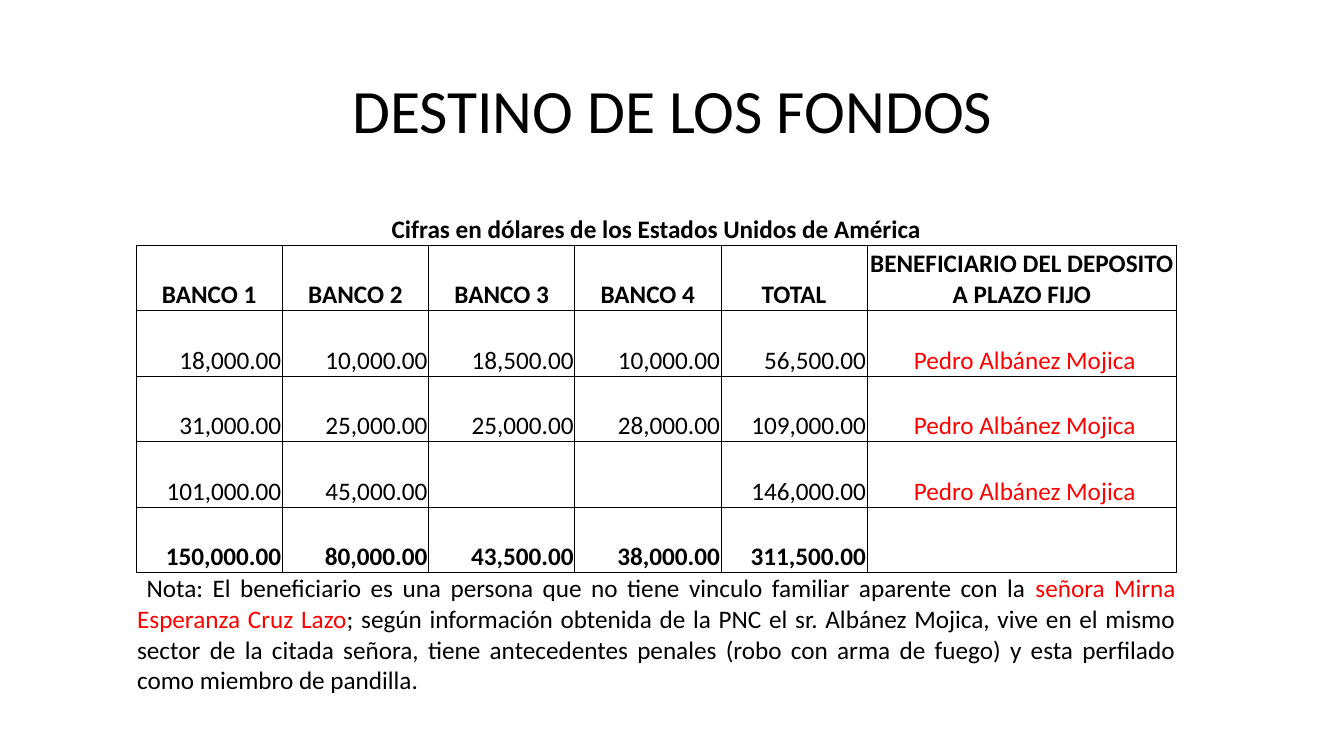
from pptx import Presentation
from pptx import util as u
from pptx.dml.color import RGBColor
from pptx.enum import text
from pptx.oxml.ns import qn
from lxml import etree

FONT, BLACK, RED = "Calibri", "000000", "FF0000"
AL = text.PP_ALIGN
WHO = " Pedro Albánez Mojica"
HEAD = ["BANCO 1", "BANCO 2", "BANCO 3", "BANCO 4", "TOTAL",
        "BENEFICIARIO DEL DEPOSITO A PLAZO FIJO"]
SUMS = [
    ["18,000.00", "10,000.00", "18,500.00", "10,000.00", "56,500.00", WHO],
    ["31,000.00", "25,000.00", "25,000.00", "28,000.00", "109,000.00", WHO],
    ["101,000.00", "45,000.00", "", "", "146,000.00", WHO],
    ["150,000.00", "80,000.00", "43,500.00", "38,000.00", "311,500.00", ""],
]
NOTE = [
    (" Nota: El beneficiario es una persona que no tiene vinculo familiar "
     "aparente con la ", BLACK),
    ("señora Mirna Esperanza Cruz Lazo", RED),
    ("; según información obtenida de la PNC el sr. Albánez Mojica, vive en "
     "el mismo sector de la citada señora, tiene antecedentes penales (robo "
     "con arma de fuego) y esta perfilado como miembro de pandilla.", BLACK),
]


def paint(font, color):
    font.color.rgb = RGBColor.from_string(color)


def add_run(par, words, size, color=BLACK, bold=False):
    run = par.add_run()
    run.text = words
    run.font.name = FONT
    run.font.size = u.Pt(size)
    run.font.bold = bold
    paint(run.font, color)


def add_title(slide, words):
    title = slide.shapes.title
    title.left, title.top = u.Inches(0.92), u.Inches(0.4)
    title.width, title.height = u.Inches(11.5), u.Inches(1.45)
    title.text_frame.vertical_anchor = text.MSO_ANCHOR.MIDDLE
    par = title.text_frame.paragraphs[0]
    par.alignment = AL.CENTER
    par.line_spacing = 0.9
    add_run(par, words, 44)


def add_edges(cell, sides):
    """Draw the named sides in black and leave the others without a line."""
    props = cell._tc.get_or_add_tcPr()
    for side in "LRTB":
        line = etree.SubElement(props, qn("a:ln" + side), w=str(u.Pt(0.5)))
        if side in sides:
            fill = etree.SubElement(line, qn("a:solidFill"))
            etree.SubElement(fill, qn("a:srgbClr"), val=BLACK)
        else:
            etree.SubElement(line, qn("a:noFill"))


def fill_cell(cell, runs, align, bold=False):
    cell.vertical_anchor = text.MSO_ANCHOR.BOTTOM
    cell.margin_left = cell.margin_right = cell.margin_top = u.Inches(0.01)
    cell.margin_bottom = 0
    par = cell.text_frame.paragraphs[0]
    par.alignment = align
    par.font.size = u.Pt(18)
    for words, color in runs:
        add_run(par, words, 18, color, bold)


def add_grid(slide):
    wide = [1.45] * 5 + [3.07]
    high = [0.84] + [0.65] * 5 + [0.97]
    last = len(high) - 1
    frame = slide.shapes.add_table(
        len(high), len(wide), u.Inches(1.35), u.Inches(1.59),
        u.Inches(sum(wide)), u.Inches(sum(high)))
    grid = frame.table
    grid.first_row = grid.horz_banding = False
    for col, size in zip(grid.columns, wide):
        col.width = u.Inches(size)
    for row, size in zip(grid.rows, high):
        row.height = u.Inches(size)

    # Borders: the caption and the note touch the ruled rows only
    for r, row in enumerate(grid.rows):
        for cell in row.cells:
            add_edges(cell, {0: "B", last: "T"}.get(r, "LRTB"))
            cell.fill.background()

    # Caption and note span every column
    for r in (0, last):
        grid.cell(r, 0).merge(grid.cell(r, len(wide) - 1))
    caption = "Cifras en dólares de los Estados Unidos de América"
    fill_cell(grid.cell(0, 0), [(caption, BLACK)], AL.CENTER, True)
    fill_cell(grid.cell(last, 0), NOTE, AL.JUSTIFY)

    # Headings, deposits and totals
    for r, row in enumerate([HEAD] + SUMS, 1):
        for c, words in enumerate(row):
            align = AL.CENTER if r == 1 or c == 5 else AL.RIGHT
            color = RED if words == WHO else BLACK
            runs = [(words, color)] if words else []
            fill_cell(grid.cell(r, c), runs, align, r in (1, last - 1))


def main():
    deck = Presentation()
    deck.slide_width, deck.slide_height = u.Inches(13.33), u.Inches(7.5)
    slide = deck.slides.add_slide(deck.slide_layouts[5])
    add_title(slide, "DESTINO DE LOS FONDOS")
    add_grid(slide)
    deck.save("out.pptx")


if __name__ == "__main__":
    main()
